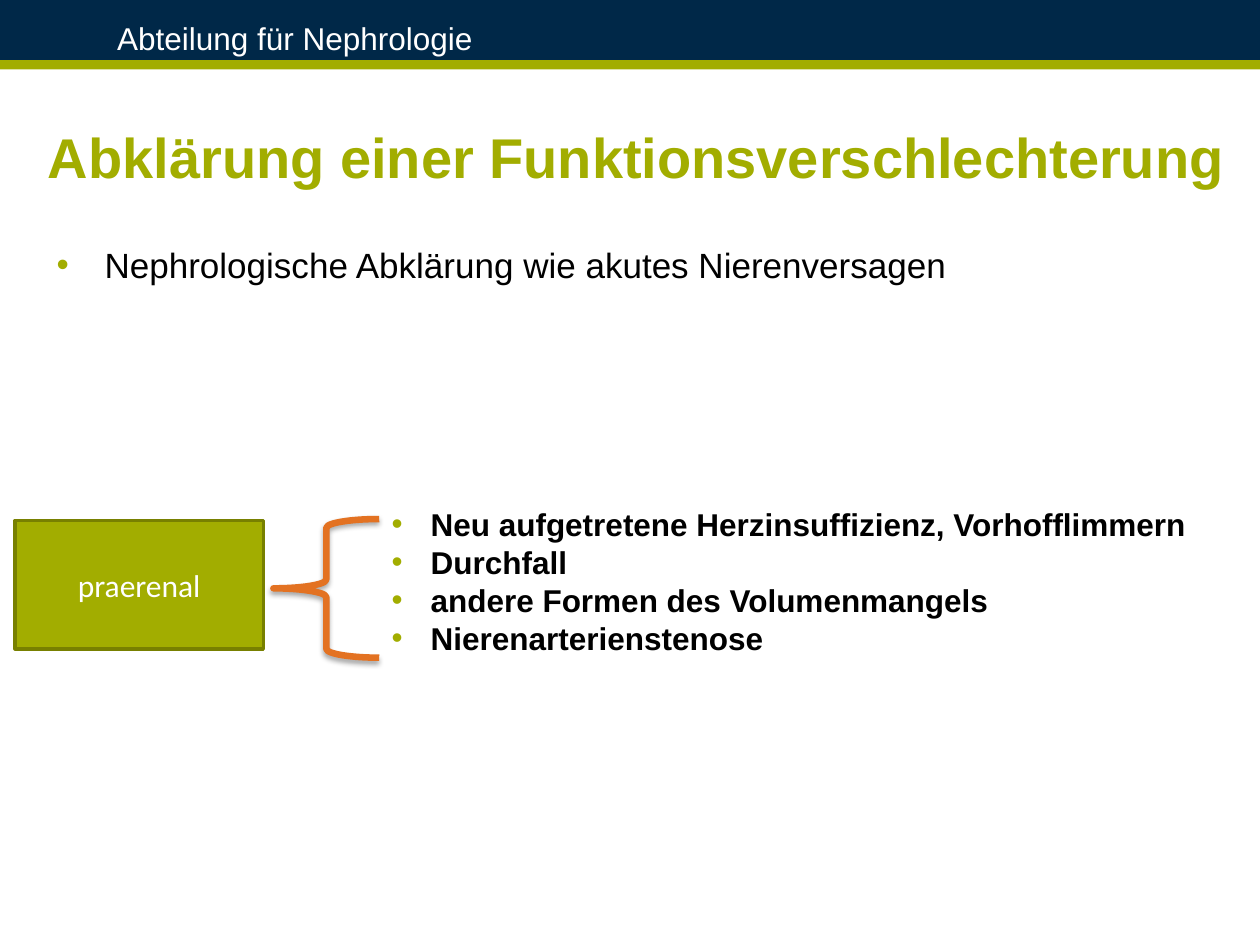
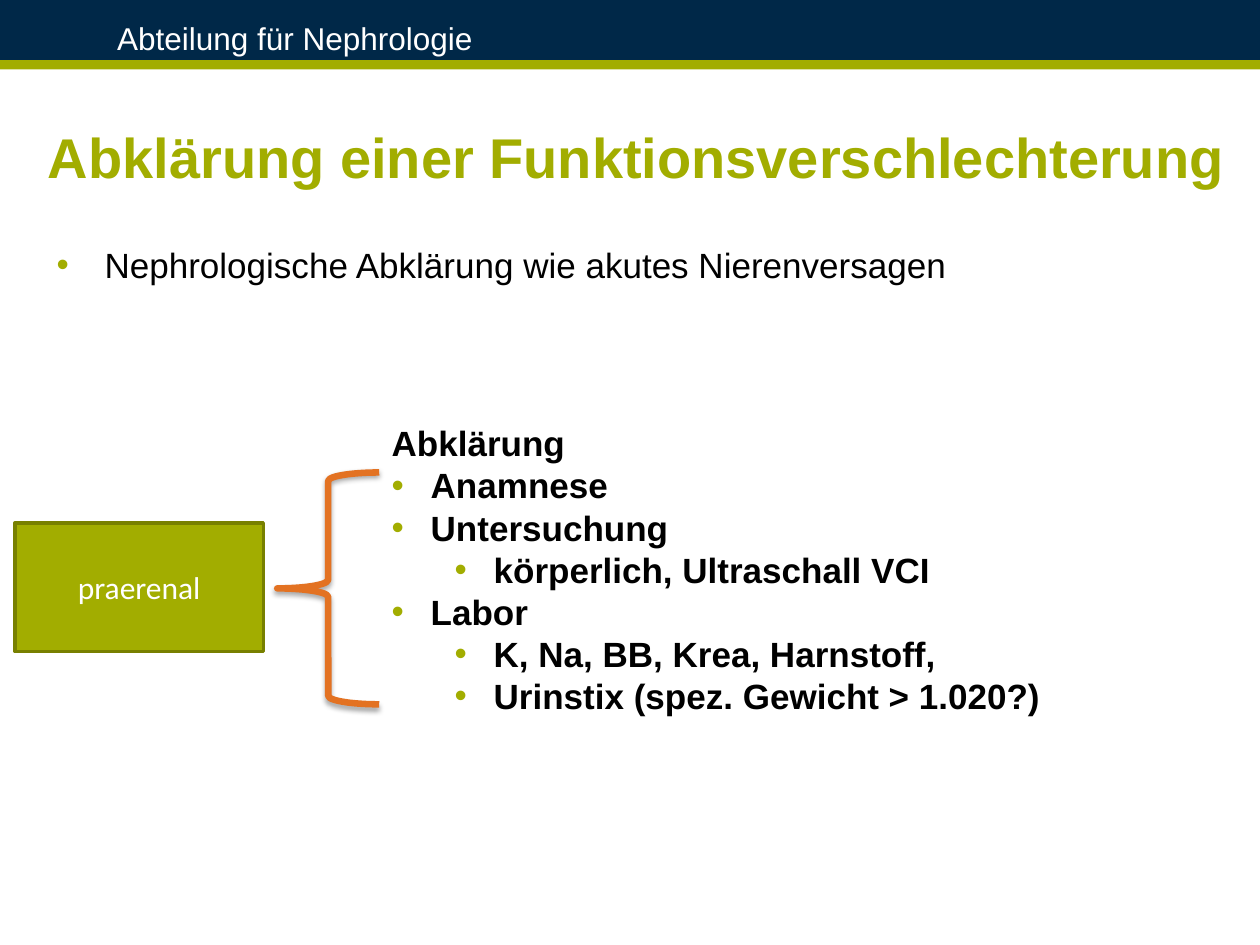
from dataclasses import dataclass

from lxml import etree
from pptx import Presentation
from pptx.dml.color import RGBColor
from pptx.enum.shapes import MSO_CONNECTOR, MSO_SHAPE
from pptx.enum.text import MSO_ANCHOR, MSO_AUTO_SIZE, PP_ALIGN
from pptx.oxml.ns import qn
from pptx.util import Inches, Pt

RECTANGLE, LEFT_BRACE = MSO_SHAPE.RECTANGLE, MSO_SHAPE.LEFT_BRACE
STRAIGHT = MSO_CONNECTOR.STRAIGHT
TOP, MIDDLE = MSO_ANCHOR.TOP, MSO_ANCHOR.MIDDLE
LEFT, CENTER = PP_ALIGN.LEFT, PP_ALIGN.CENTER
NO_AUTOFIT = MSO_AUTO_SIZE.NONE
TWO_CONTENT_LAYOUT = 3


@dataclass(frozen=True)
class Theme:
    navy: str = "002848"
    lime: str = "A2AD00"
    dark_lime: str = "788000"
    orange: str = "E37222"
    white: str = "FFFFFF"
    black: str = "000000"
    font: str = "Arial"
    box_font: str = "Calibri"
    title_size: int = 32
    lead_size: int = 20
    label_size: int = 18


THEME = Theme()
SLIDE_WIDTH, SLIDE_HEIGHT = 10, 7.5
STRIPE_TOP, PANEL_TOP = 0.52, 0.55
DEPARTMENT_BOX = (0.83, 0.08, 6.59, 0.25)
TITLE_BOX = (0.28, 0.92, 9.61, 0.64)
LEAD_BOX = (0.35, 1.47, 10, 4.72)
LEAD_INDENT, DETAIL_INDENT, LEVEL_STEP = 0.38, 0.31, 0.5

DEPARTMENT = "Abteilung für Nephrologie"
TITLE = "Abklärung einer Funktionsverschlechterung"
LEAD = "Nephrologische Abklärung wie akutes Nierenversagen"
CATEGORY = "praerenal"

# Each detail line: text, level, bulleted
CAUSES = [
    ("Neu aufgetretene Herzinsuffizienz, Vorhofflimmern", 0, True),
    ("Durchfall", 0, True),
    ("andere Formen des Volumenmangels", 0, True),
    ("Nierenarterienstenose", 0, True),
]
WORKUP = [
    ("Abklärung", 0, False),
    ("Anamnese", 0, True),
    ("Untersuchung", 0, True),
    ("körperlich, Ultraschall VCI", 1, True),
    ("Labor", 0, True),
    ("K, Na, BB, Krea, Harnstoff,", 1, True),
    ("Urinstix (spez. Gewicht > 1.020?)", 1, True),
]


def rgb(color):
    return RGBColor.from_string(color)


def inches(box):
    return [Inches(length) for length in box]


def add_child(parent, tag, **attributes):
    child = etree.SubElement(parent, qn(tag))
    for name, value in attributes.items():
        child.set(name, str(value))
    return child


def set_bullet(paragraph, indent, level):
    """Give the paragraph a lime bullet, or none where indent is None."""
    properties = paragraph._p.get_or_add_pPr()
    hanging = Inches(indent or 0)
    properties.set("marL", str(hanging + Inches(LEVEL_STEP * level)))
    properties.set("indent", str(-hanging))
    if indent is None:
        add_child(properties, "a:buNone")
        return
    add_child(add_child(properties, "a:buClr"), "a:srgbClr", val=THEME.lime)
    add_child(properties, "a:buFont", typeface=THEME.font)
    add_child(properties, "a:buChar", char="•")


def write(paragraph, text, *, size, color=THEME.black, font=THEME.font,
          bold=False, align=LEFT, indent=None, level=0):
    paragraph.level = level
    set_bullet(paragraph, indent, level)
    paragraph.alignment = align
    paragraph.space_before = Pt(0)
    run = paragraph.add_run()
    run.text = text
    run.font.name = font
    run.font.size = Pt(size)
    run.font.bold = bold
    run.font.color.rgb = rgb(color)


def prepare_frame(shape, anchor=TOP, margin_top=0.05):
    frame = shape.text_frame
    frame.word_wrap = True
    frame.auto_size = NO_AUTOFIT
    frame.vertical_anchor = anchor
    frame.margin_top = Inches(margin_top)
    return frame


def add_shape(slide, kind, box, fill=None, line=None, line_width=0.75):
    shape = slide.shapes.add_shape(kind, *inches(box))
    shape.shadow.inherit = False
    if fill:
        shape.fill.solid()
        shape.fill.fore_color.rgb = rgb(fill)
    else:
        shape.fill.background()
    if line:
        shape.line.color.rgb = rgb(line)
        shape.line.width = Pt(line_width)
    else:
        shape.line.fill.background()
    return shape


def move_bands_to_layout(slide):
    """Draw the header bands once and hand them to the slide's layout."""
    page = add_shape(slide, RECTANGLE, (0, 0, SLIDE_WIDTH, SLIDE_HEIGHT),
                     THEME.navy, THEME.navy)
    stripe = slide.shapes.add_connector(
        STRAIGHT, *inches((0, STRIPE_TOP, SLIDE_WIDTH, STRIPE_TOP)))
    stripe.line.color.rgb = rgb(THEME.lime)
    stripe.line.width = Pt(6)
    add_child(stripe.element.spPr, "a:effectLst")
    panel = add_shape(
        slide, RECTANGLE,
        (0, PANEL_TOP, SLIDE_WIDTH, SLIDE_HEIGHT - PANEL_TOP), THEME.white)
    layout_tree = slide.slide_layout.shapes.element
    for index, band in enumerate((page, stripe, panel)):
        band.element.xpath("./*/p:cNvPr")[0].set("id", str(101 + index))
        layout_tree.insert(2 + index, band.element)


def fill_placeholder(placeholder, box, text, margin_top=0.05, **text_format):
    placeholder.left, placeholder.top, placeholder.width, placeholder.height = inches(box)
    frame = prepare_frame(placeholder, margin_top=margin_top)
    write(frame.paragraphs[0], text, **text_format)


def add_heading(slide):
    fill_placeholder(slide.shapes.title, TITLE_BOX, TITLE,
                     size=THEME.title_size, color=THEME.lime, bold=True)
    fill_placeholder(slide.placeholders[1], DEPARTMENT_BOX, DEPARTMENT,
                     margin_top=0.07, size=THEME.label_size, color=THEME.white)
    fill_placeholder(slide.placeholders[2], LEAD_BOX, LEAD, margin_top=0.46,
                     size=THEME.lead_size, indent=LEAD_INDENT)


def add_category(slide, box):
    shape = add_shape(slide, RECTANGLE, box, THEME.lime, THEME.dark_lime, 2)
    frame = prepare_frame(shape, MIDDLE)
    write(frame.paragraphs[0], CATEGORY, size=THEME.label_size,
          color=THEME.white, font=THEME.box_font, align=CENTER)


def add_details(slide, box, lines, size):
    frame = prepare_frame(slide.shapes.add_textbox(*inches(box)))
    for index, (text, level, bulleted) in enumerate(lines):
        paragraph = frame.add_paragraph() if index else frame.paragraphs[0]
        write(paragraph, text, size=size, bold=True, level=level,
              indent=DETAIL_INDENT if bulleted else None)


def add_brace(slide, box):
    brace = add_shape(slide, LEFT_BRACE, box, line=THEME.orange, line_width=3.75)
    effects = brace.element.spPr.find(qn("a:effectLst"))
    shadow = add_child(effects, "a:outerShdw", blurRad=Pt(3.1), dist=Pt(1.8),
                       dir=90 * 60000, rotWithShape=0)
    color = add_child(shadow, "a:srgbClr", val=THEME.black)
    add_child(color, "a:alpha", val=35000)


def fill_slide(slide, lines, size, category_box, details_box, brace_box):
    add_heading(slide)
    add_category(slide, category_box)
    add_details(slide, details_box, lines, size)
    add_brace(slide, brace_box)


def main():
    presentation = Presentation()
    presentation.slide_width = Inches(SLIDE_WIDTH)
    presentation.slide_height = Inches(SLIDE_HEIGHT)
    layout = presentation.slide_layouts[TWO_CONTENT_LAYOUT]
    causes_slide = presentation.slides.add_slide(layout)
    workup_slide = presentation.slides.add_slide(layout)
    move_bands_to_layout(causes_slide)
    fill_slide(causes_slide, CAUSES, THEME.label_size,
               category_box=(0.12, 4.13, 1.97, 1.02),
               details_box=(3.01, 3.96, 6.57, 1.92),
               brace_box=(2.17, 4.12, 0.84, 1.1))
    fill_slide(workup_slide, WORKUP, THEME.lead_size,
               category_box=(0.12, 4.15, 1.97, 1.02),
               details_box=(3.01, 3.3, 5.39, 3.13),
               brace_box=(2.2, 3.75, 0.81, 1.84))
    presentation.save("out.pptx")


if __name__ == "__main__":
    main()
